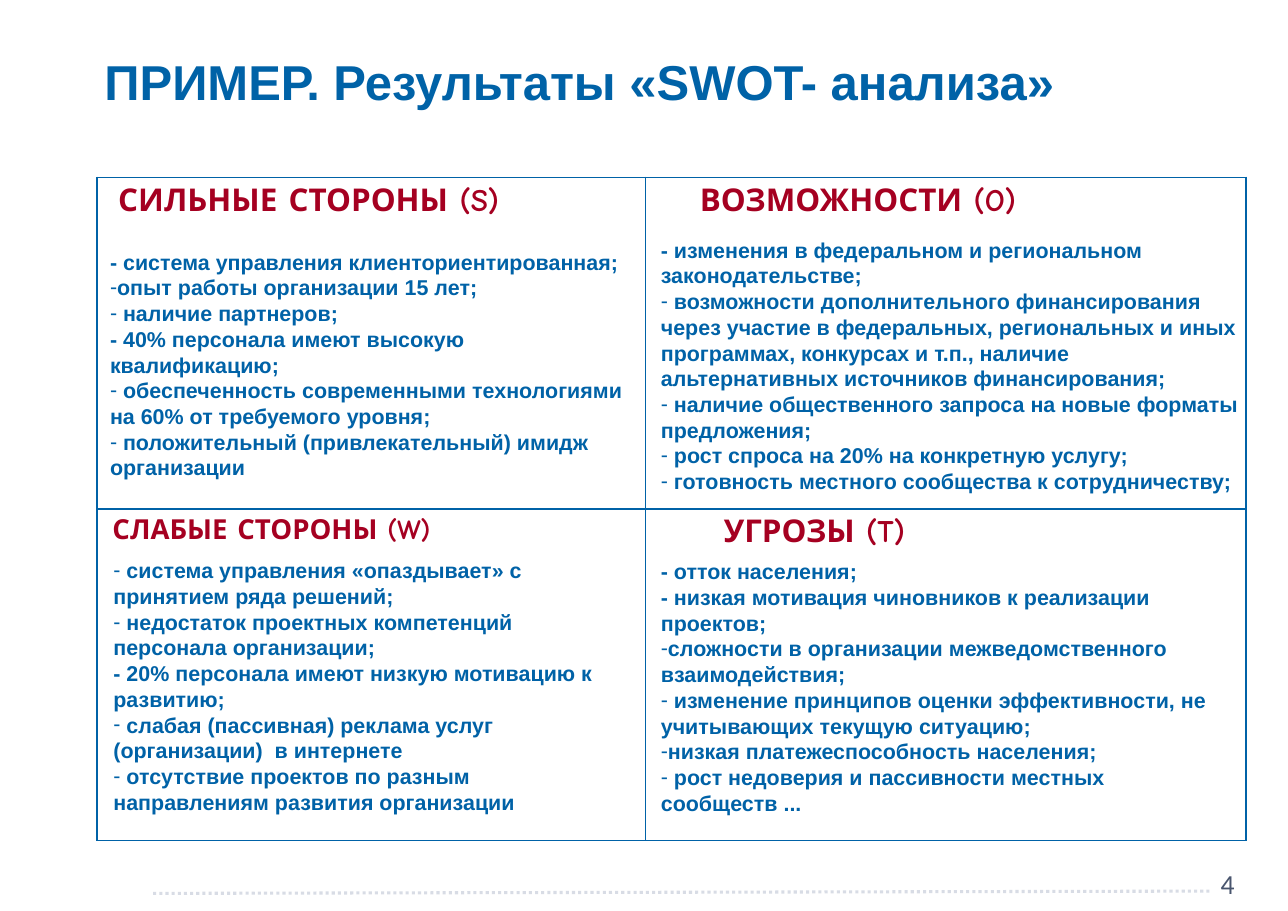
from dataclasses import dataclass

import pptx
import pptx.dml.color
import pptx.enum.dml
import pptx.enum.shapes
import pptx.enum.text
import pptx.oxml
import pptx.oxml.ns
import pptx.util

SLIDE_W, SLIDE_H = 11.69, 8.27
COLORS = {"blue": "0062A7", "red": "A50021", "slate": "49556E", "rule": "D8DCE5"}
COL_SHARES = (42.6, 46.62)
ROW_SHARE = 36.4
BODY_FONT = {"name": "Arial", "size": pptx.util.Pt(14), "bold": True}


@dataclass
class Item:
    text: str
    bullet: bool = True


@dataclass
class Quadrant:
    row: int
    col: int
    heading: str
    size: float
    margin: float  # heading inset, share of slide width
    box: tuple[float, float, float, float]  # shares of the slide's size
    items: list[Item]


QUADRANTS = [
    Quadrant(0, 0, "СИЛЬНЫЕ СТОРОНЫ (S)", 20.5, 1.65, (7.7, 26.72, 41.75, 26.84), [
        Item("- система управления клиенториентированная;", False),
        Item("опыт работы организации 15 лет;"),
        Item(" наличие партнеров;"),
        Item("- 40% персонала имеют высокую квалификацию;", False),
        Item(" обеспеченность современными технологиями на 60% от требуемого уровня;"),
        Item(" положительный (привлекательный) имидж организации"),
    ]),
    Quadrant(1, 0, "СЛАБЫЕ СТОРОНЫ (W)", 18, 1.2, (7.96, 60.58, 41.49, 29.75), [
        Item(" система управления «опаздывает» с принятием ряда решений;"),
        Item(" недостаток проектных компетенций персонала организации;"),
        Item("- 20% персонала имеют низкую мотивацию к развитию;", False),
        Item(" слабая (пассивная) реклама услуг (организации)  в интернете"),
        Item(" отсутствие проектов по разным направлениям развития организации"),
    ]),
    Quadrant(0, 1, "ВОЗМОЖНОСТИ (O)", 20.5, 4.2, (50.47, 25.39, 47.56, 29.75), [
        Item("- изменения в федеральном и региональном законодательстве;", False),
        Item(" возможности дополнительного финансирования через участие в "
             "федеральных, региональных и иных программах, конкурсах и т.п., "
             "наличие альтернативных источников финансирования;"),
        Item(" наличие общественного запроса на новые форматы предложения;"),
        Item(" рост спроса на 20% на конкретную услугу;"),
        Item(" готовность местного сообщества к сотрудничеству;"),
    ]),
    Quadrant(1, 1, "УГРОЗЫ (T)", 20.5, 6.05, (50.47, 60.7, 44.14, 29.75), [
        Item("- отток населения;", False),
        Item("- низкая мотивация чиновников к реализации проектов;", False),
        Item("сложности в организации межведомственного взаимодействия;"),
        Item(" изменение принципов оценки эффективности, не учитывающих текущую ситуацию;"),
        Item("низкая платежеспособность населения;"),
        Item(" рост недоверия и пассивности местных сообществ ..."),
    ]),
]


def across(share: float) -> pptx.util.Length:
    return pptx.util.Inches(SLIDE_W * share / 100)


def down(share: float) -> pptx.util.Length:
    return pptx.util.Inches(SLIDE_H * share / 100)


def rgb(key: str) -> pptx.dml.color.RGBColor:
    return pptx.dml.color.RGBColor.from_string(COLORS[key])


def format_font(font, values: dict, color: str) -> None:
    for name, value in values.items():
        setattr(font, name, value)
    font.color.rgb = rgb(color)


def add_bullet(p) -> None:
    pPr = p._p.get_or_add_pPr()
    pPr.set("marL", "0")
    pPr.set("indent", "0")
    for tag, attr, value in (("buFont", "typeface", "Arial"), ("buChar", "char", "-")):
        el = pPr.makeelement(pptx.oxml.ns.qn(f"a:{tag}"), {attr: value})
        pPr.append(el)


def add_text(s, box: tuple[float, float, float, float], items: list[Item],
             values: dict, color: str):
    x, y, w, h = box
    sp = s.shapes.add_textbox(across(x), down(y), across(w), down(h))
    tf = sp.text_frame
    tf.word_wrap = True
    for i, item in enumerate(items):
        p = tf.paragraphs[0] if i == 0 else tf.add_paragraph()
        if item.bullet:
            add_bullet(p)
        r = p.add_run()
        r.text = item.text
        format_font(r.font, values, color)
    return tf


def add_borders(cell) -> None:
    tcPr = cell._tc.get_or_add_tcPr()
    for i, side in enumerate(("lnL", "lnR", "lnT", "lnB")):
        tcPr.insert(i, pptx.oxml.parse_xml(
            f'<a:{side} {pptx.oxml.ns.nsdecls("a")} w="12700"><a:solidFill>'
            f'<a:srgbClr val="{COLORS["blue"]}"/></a:solidFill></a:{side}>'))


def add_heading(cell, q: Quadrant) -> None:
    cell.fill.background()
    add_borders(cell)
    cell.margin_left = across(q.margin)
    r = cell.text_frame.paragraphs[0].add_run()
    r.text = q.heading
    values = {"name": "Comic Neue", "size": pptx.util.Pt(q.size), "bold": True}
    format_font(r.font, values, "red")


def main() -> None:
    prs = pptx.Presentation()
    prs.slide_width, prs.slide_height = across(100), down(100)
    s = prs.slides.add_slide(prs.slide_layouts[6])

    # Footer: dotted rule and page number
    rule = s.shapes.add_connector(pptx.enum.shapes.MSO_CONNECTOR.STRAIGHT,
                                  across(11.89), down(98.07), across(93.93), down(97.82))
    rule.line.color.rgb = rgb("rule")
    rule.line.width = pptx.util.Pt(2)
    rule.line.dash_style = pptx.enum.dml.MSO_LINE.ROUND_DOT
    spPr = rule._element.spPr
    spPr.append(spPr.makeelement(pptx.oxml.ns.qn("a:effectLst"), {}))
    add_text(s, (93.93, 94.56, 4.53, 3.63), [Item("4", False)],
             {"name": "Calibri", "size": pptx.util.Pt(18)}, "slate")

    # Title
    tf = add_text(s, (7.27, 5.68, 89.56, 7.26),
                  [Item("ПРИМЕР. Результаты «SWOT- анализа»", False)],
                  {**BODY_FONT, "size": pptx.util.Pt(32)}, "blue")
    tf.vertical_anchor = pptx.enum.text.MSO_ANCHOR.MIDDLE
    tf.paragraphs[0].line_spacing = 0.9

    # SWOT grid
    table = s.shapes.add_table(2, 2, across(7.53), down(19.47),
                               across(sum(COL_SHARES)), down(2 * ROW_SHARE)).table
    table.first_row = table.horz_banding = False
    for column, share in zip(table.columns, COL_SHARES):
        column.width = across(share)
    for row in table.rows:
        row.height = down(ROW_SHARE)

    # Headings and lists
    for q in QUADRANTS:
        add_heading(table.cell(q.row, q.col), q)
        add_text(s, q.box, q.items, BODY_FONT, "blue")

    prs.save("out.pptx")


if __name__ == "__main__":
    main()
